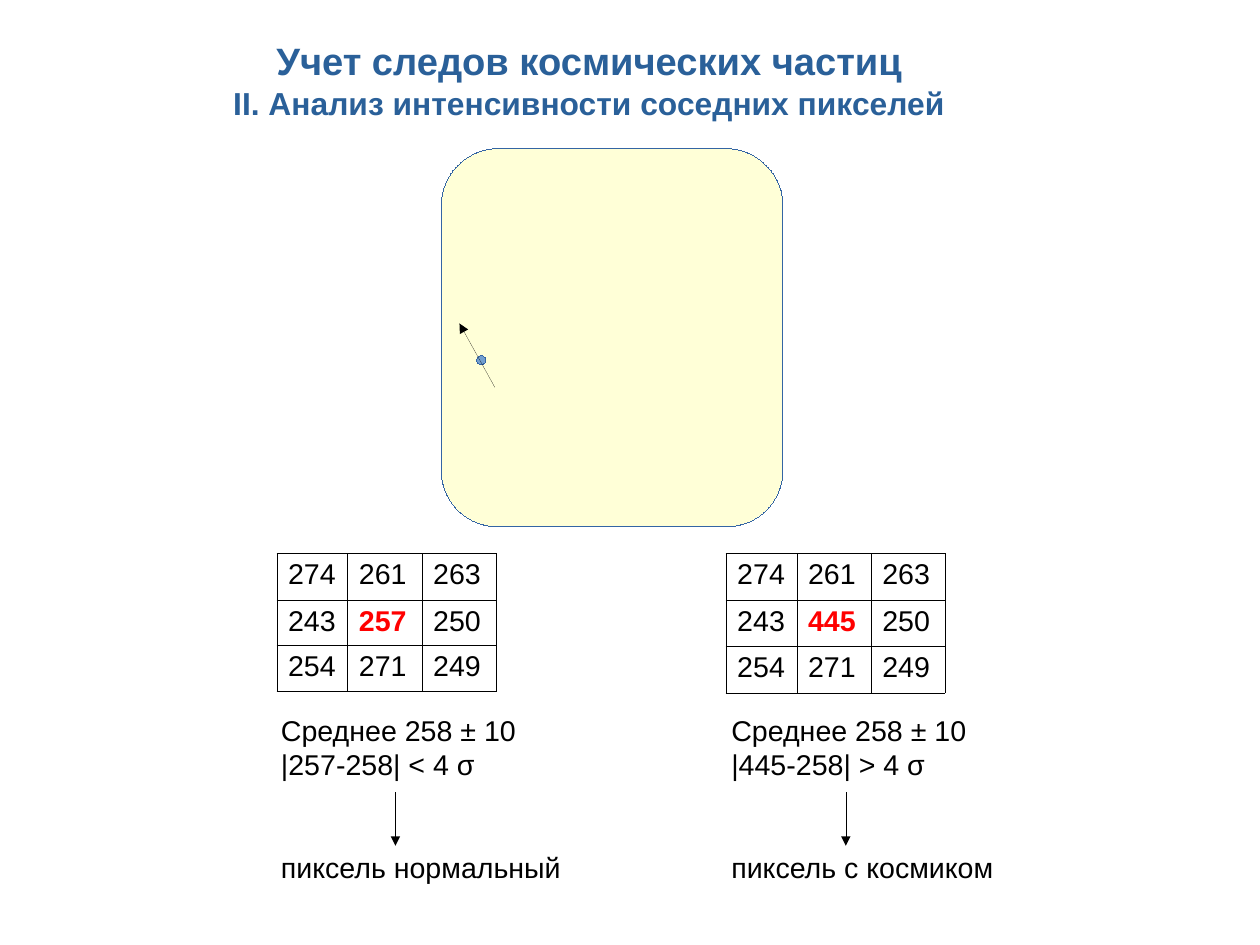
from pptx import Presentation
from pptx import util as u
from pptx.dml.color import RGBColor
from pptx.enum import shapes, text
from pptx.oxml import parse_xml
from pptx.oxml.ns import nsdecls

INK = {"title": "2A6099", "text": "000000", "hot": "FF0000", "cell": "FFFFFF",
       "star": "FFFFD7", "rim": "3465A4", "dot": "729FCF"}
COLS = [0.62, 0.65, 0.65]
ROWS = [0.41, 0.39, 0.41]
CASES = [
    (2.42, 2.36, "257", "|257-258| < 4 σ", "пиксель нормальный"),
    (6.35, 6.3, "445", "|445-258| > 4 σ", "пиксель с космиком"),
]


def rgb(name):
    return RGBColor.from_string(INK[name])


def write(frame, words, size=18, color="text", bold=False, align=None, gap=0, more=False):
    para = frame.add_paragraph() if more else frame.paragraphs[0]
    run = para.add_run()
    run.text = words
    font = run.font
    font.name, font.size, font.bold = "Arial", u.Pt(size), bold
    font.color.rgb = rgb(color)
    para.alignment = align
    para.space_before = u.Pt(gap)


def thin(line, color):
    line.color.rgb = rgb(color)
    edge = line._get_or_add_ln()
    edge.set("w", "0")
    return edge


class Page:
    """Holds the slide and draws each kind of element in one style."""

    def __init__(self, deck):
        self.slide = deck.slides.add_slide(deck.slide_layouts[5])
        self.items = self.slide.shapes

    def title(self, box, lines):
        head = self.items.title
        head.left, head.top, head.width, head.height = map(u.Inches, box)
        frame = head.text_frame
        frame.word_wrap = True
        frame.auto_size = text.MSO_AUTO_SIZE.NONE
        frame.vertical_anchor = text.MSO_ANCHOR.TOP
        for i, (words, size) in enumerate(lines):
            write(frame, words, size=size, color="title", bold=True,
                  align=text.PP_ALIGN.CENTER, more=i > 0)

    def shape(self, kind, box, fill):
        item = self.items.add_shape(kind, *map(u.Inches, box))
        item.shadow.inherit = False
        item.fill.solid()
        item.fill.fore_color.rgb = rgb(fill)
        thin(item.line, "rim")

    def arrow(self, *ends):
        item = self.items.add_connector(shapes.MSO_CONNECTOR.STRAIGHT, *map(u.Inches, ends))
        tip = parse_xml(f'<a:tailEnd {nsdecls("a")} type="triangle"/>')
        thin(item.line, "text").append(tip)
        item._element.spPr.append(parse_xml(f'<a:effectLst {nsdecls("a")}/>'))

    def note(self, box, lines):
        frame = self.items.add_textbox(*map(u.Inches, box)).text_frame
        frame.word_wrap = True
        for i, (words, gap) in enumerate(lines):
            write(frame, words, gap=gap, more=i > 0)

    def grid(self, left, top, rows, hot):
        size = map(u.Inches, (left, top, sum(COLS), sum(ROWS)))
        table = self.items.add_table(len(ROWS), len(COLS), *size).table
        table.first_row = table.horz_banding = False
        for col, wide in zip(table.columns, COLS):
            col.width = u.Inches(wide)
        for row, high, words in zip(table.rows, ROWS, rows):
            row.height = u.Inches(high)
            for cell, word in zip(row.cells, words):
                self.cell(cell, word, word == hot)

    def cell(self, cell, word, hot):
        write(cell.text_frame, word, color="hot" if hot else "text", bold=hot)
        cell.fill.solid()
        cell.fill.fore_color.rgb = rgb("cell")
        props = cell._tc.get_or_add_tcPr()
        for i, side in enumerate(("lnL", "lnR", "lnT", "lnB")):
            props.insert(i, parse_xml(
                f'<a:{side} {nsdecls("a")} w="{u.Pt(0.06)}"><a:solidFill>'
                f'<a:srgbClr val="{INK["text"]}"/></a:solidFill></a:{side}>'))


def main():
    deck = Presentation()
    deck.slide_width, deck.slide_height = u.Inches(28 / 2.54), u.Inches(21 / 2.54)
    page = Page(deck)
    page.title((1.65, 0.28, 7.01, 0.78), [
        ("Учет следов космических частиц", 24),
        ("II. Анализ интенсивности соседних пикселей", 20)])
    kinds = shapes.MSO_SHAPE
    page.shape(kinds.ROUNDED_RECTANGLE, (3.86, 1.3, 2.99, 3.31), "star")
    page.shape(kinds.OVAL, (4.17, 3.11, 0.08, 0.08), "dot")
    page.arrow(4.33, 3.39, 4.02, 2.83)
    for left, edge, mid, test, result in CASES:
        page.grid(left, 4.84, [("274", "261", "263"), ("243", mid, "250"),
                               ("254", "271", "249")], mid)
        page.note((edge, 6.19, 3.39, 1.53),
                  [("Среднее 258 ± 10", 0), (test, 0), (result, 43)])
        page.arrow(edge + 1.1, 6.93, edge + 1.1, 7.4)
    deck.save("out.pptx")


if __name__ == "__main__":
    main()
